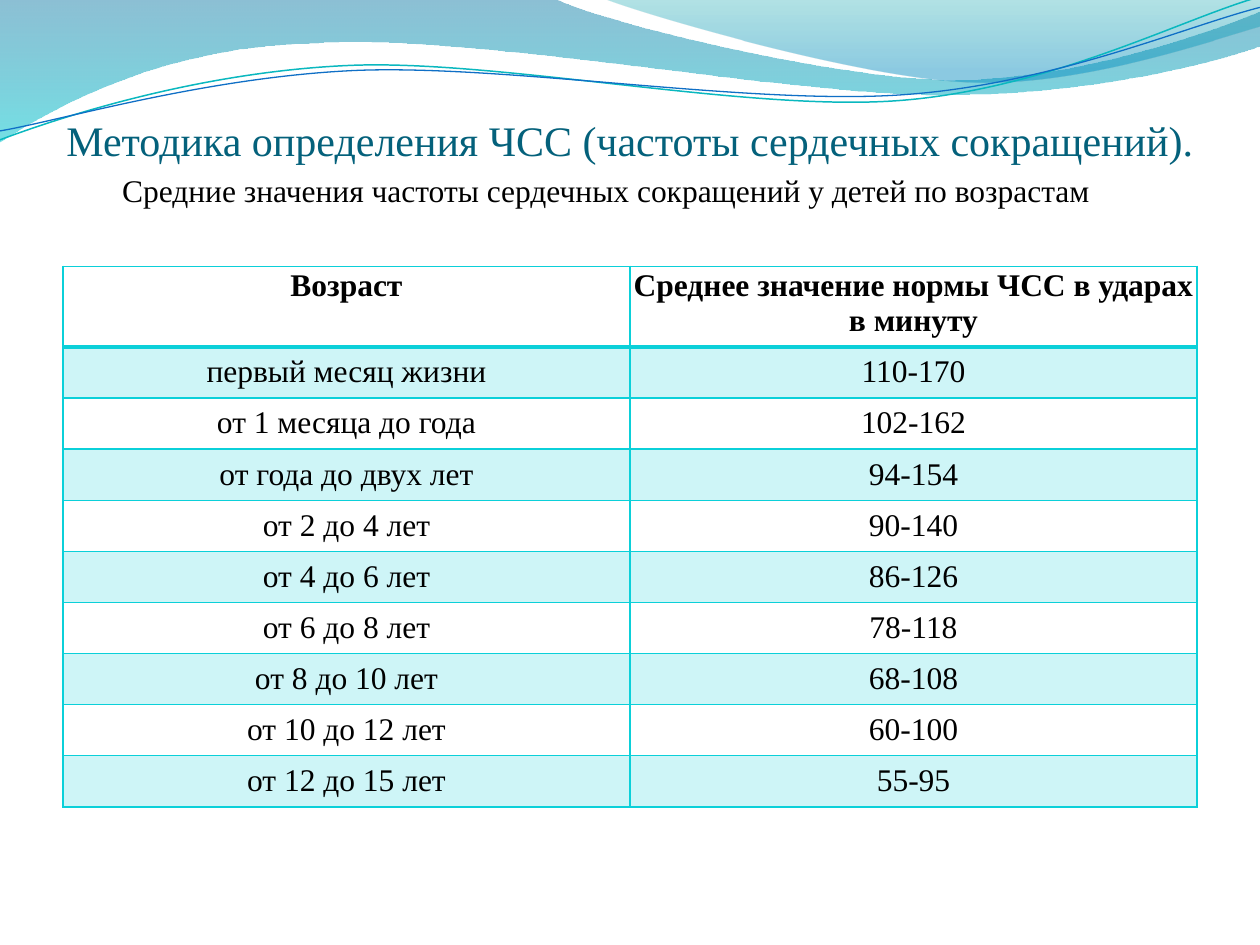
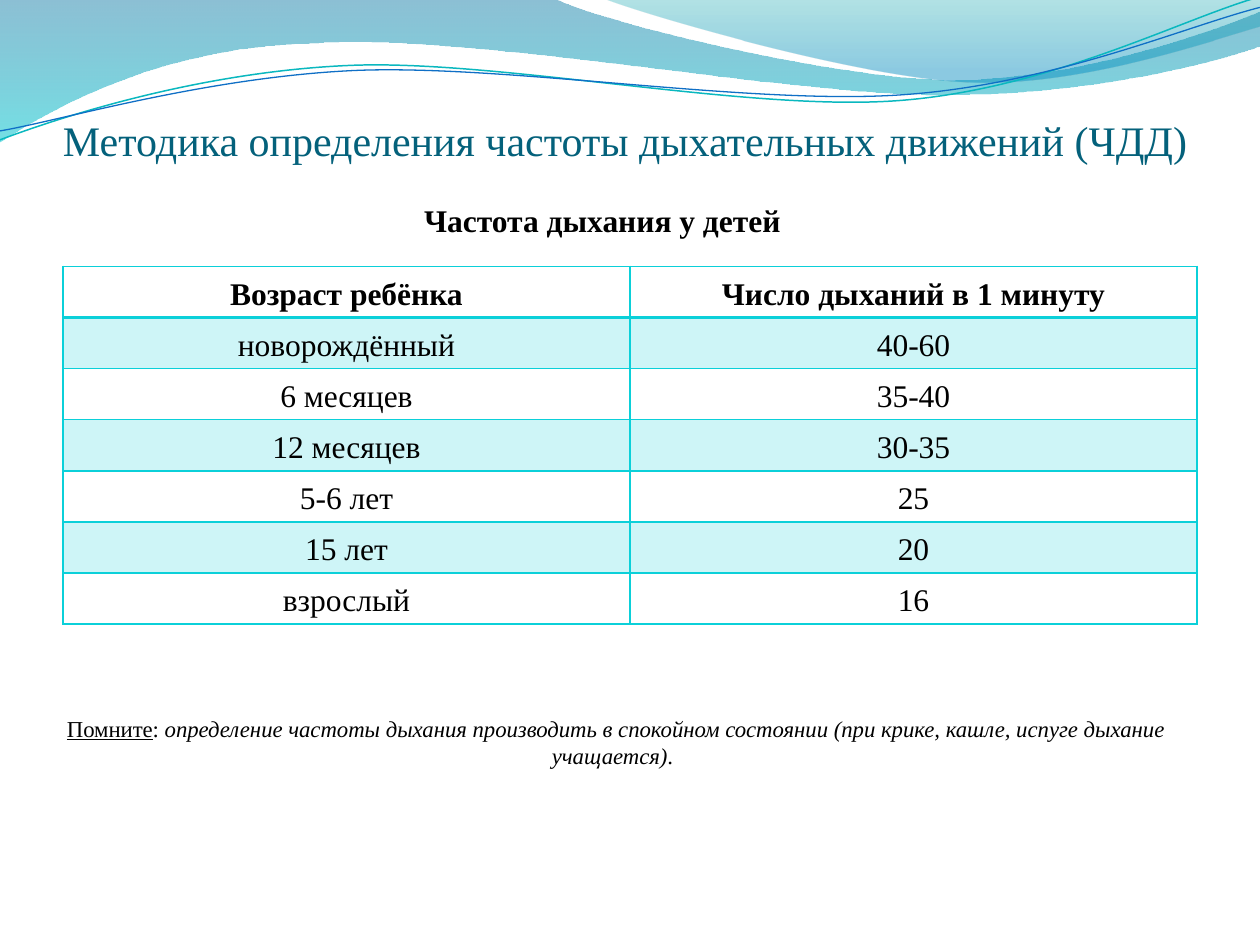
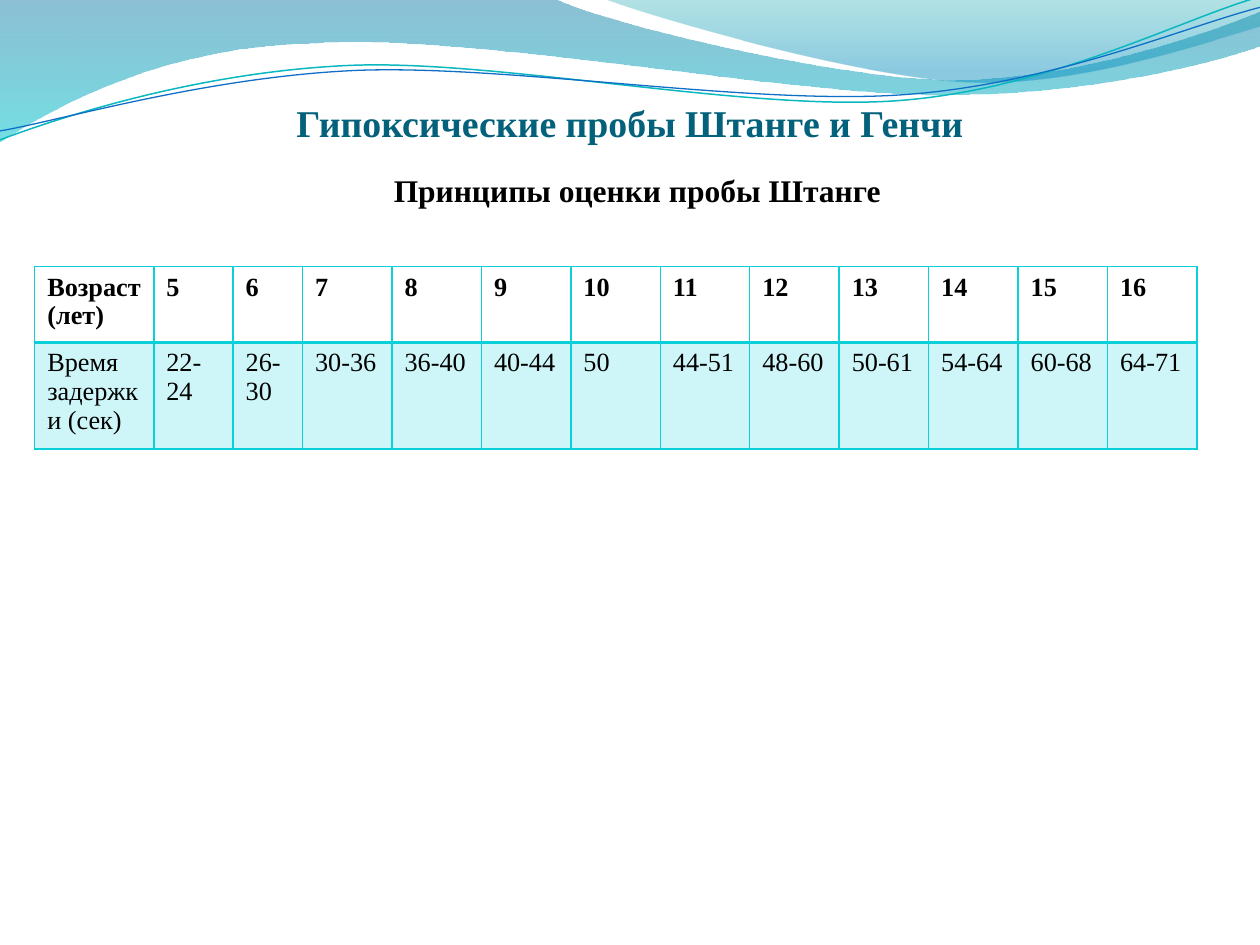
from lxml.etree import SubElement
from pptx import Presentation
from pptx.dml.color import RGBColor
from pptx.enum.text import MSO_ANCHOR as Anchor, PP_ALIGN as Align
from pptx.oxml.ns import qn
from pptx.util import Cm, Pt

FONT = "Times New Roman"
BLACK = RGBColor(0x00, 0x00, 0x00)
TITLE_COLOR = RGBColor(0x04, 0x61, 0x7B)
ACCENT = RGBColor(0x0B, 0xD0, 0xD9)
TEAL_LINE = RGBColor(0x0A, 0xB8, 0xBF)
BLUE_LINE = RGBColor(0x0F, 0x6F, 0xC6)
WAVE_TOP = RGBColor(0x00, 0x74, 0xA1)
WAVE_BOTTOM = RGBColor(0x00, 0xC6, 0xCF)
CREST_TOP = RGBColor(0x00, 0xA1, 0xA9)
CREST_BOTTOM = RGBColor(0x00, 0x8B, 0xBF)

SLIDE_WIDTH, SLIDE_HEIGHT = 25.4, 19.05
MARGIN, CONTENT_WIDTH = 1.27, 22.86
TABLE_TOP, ROW_HEIGHT = 5.37, 1.03
BAND_OPACITY = 20

# Outlines in cm: a start point, then lines (x, y) or Bezier curves (x1, y1, x2, y2, x, y)
WAVE = [(0, 0), (11.18, -0.03),
        (12.09, 0.43, 16.87, 1.6, 19.25, 1.6), (21.67, 1.6, 24.33, 0.66, 25.4, 0.23),
        (25.43, 0.91), (24.97, 1.12, 22.1, 1.93, 18.95, 1.91),
        (15.8, 1.91, 9.7, 0.71, 6.53, 0.86), (3.28, 0.91, 1.17, 2.11, -0.03, 2.87)]
CREST = [(12.17, -0.03), (12.93, 0.28, 17.32, 1.57, 19.53, 1.65),
         (21.74, 1.75, 24.41, 0.81, 25.4, 0.53), (25.4, 0)]
TEAL_CURVE = [(0, 2.82), (1.22, 2.36, 4.01, 1.45, 7.04, 1.32),
              (10.03, 1.19, 15.06, 2.26, 18.11, 2.03), (21.16, 1.8, 23.83, 0.38, 25.35, -0.05)]
BLUE_CURVE = [(0, 2.64), (1.19, 2.44, 4.17, 1.55, 7.19, 1.42),
              (10.24, 1.3, 15.16, 2.13, 18.21, 1.91), (21.23, 1.7, 23.9, 0.53, 25.4, 0.15)]


def set_alpha(element, *opacities):
    """Give each colour in the element its opacity in percent."""
    for color, opacity in zip(element.iter(qn("a:srgbClr")), opacities):
        SubElement(color, qn("a:alpha"), val=str(opacity * 1000))


class Deck:
    def __init__(self):
        self.presentation = Presentation()
        self.presentation.slide_width = Cm(SLIDE_WIDTH)
        self.presentation.slide_height = Cm(SLIDE_HEIGHT)
        self.slide = None
        # Default font of all text
        for element in (self.presentation.element, self.presentation.slide_master.element):
            for latin in element.iter(qn("a:latin")):
                latin.set("typeface", FONT)

    def new_slide(self):
        self.slide = self.presentation.slides.add_slide(self.presentation.slide_layouts[6])
        self.gradient_area(WAVE, (0, WAVE_TOP, 45), (1, WAVE_BOTTOM, 55))
        self.gradient_area(CREST, (0, CREST_TOP, 30), (0.8, CREST_BOTTOM, 45))
        self.curve(TEAL_CURVE, TEAL_LINE, 0.85)
        self.curve(BLUE_CURVE, BLUE_LINE, 0.75)

    def outline(self, outline, close):
        points = [(Cm(x), Cm(y)) for segment in outline for x, y in zip(segment[::2], segment[1::2])]
        builder = self.slide.shapes.build_freeform(*points[0])
        builder.add_line_segments(points[1:], close=close)
        shape = builder.convert_to_shape()
        shape.shadow.inherit = False
        # Join the three points of each curve into one Bezier segment
        lines = iter(list(shape.element.iter(qn("a:lnTo"))))
        for segment in outline[1:]:
            first = next(lines)
            if len(segment) == 6:
                first.tag = qn("a:cubicBezTo")
                for line in (next(lines), next(lines)):
                    first.append(line[0])
                    line.getparent().remove(line)
        return shape

    def gradient_area(self, outline, *stops):
        shape = self.outline(outline, close=True)
        shape.line.fill.background()
        shape.fill.gradient()
        shape.fill.gradient_angle = 270
        for gradient_stop, (position, color, _) in zip(shape.fill.gradient_stops, stops):
            gradient_stop.position = position
            gradient_stop.color.rgb = color
        set_alpha(shape.element, *(opacity for _, _, opacity in stops))

    def curve(self, outline, color, width):
        shape = self.outline(outline, close=False)
        shape.fill.background()
        shape.line.color.rgb = color
        shape.line.width = Pt(width)

    def style(self, paragraph, size, color=BLACK, bold=False, align=Align.CENTER):
        paragraph.alignment = align
        for run in paragraph.runs:
            font = run.font
            font.name, font.size, font.bold = FONT, Pt(size), bold
            font.color.rgb = color

    def text(self, left, top, width, height, text, size=18, anchor=Anchor.TOP, wrap=True, **style):
        box = self.slide.shapes.add_textbox(Cm(left), Cm(top), Cm(width), Cm(height))
        frame = box.text_frame
        frame.word_wrap = wrap
        frame.vertical_anchor = anchor
        frame.text = text
        self.style(frame.paragraphs[0], size, **style)
        return frame

    def title(self, text, height=1.37, size=24, **style):
        frame = self.text(MARGIN, 1.96, CONTENT_WIDTH, height, text, size, Anchor.BOTTOM,
                          color=TITLE_COLOR, **style)
        frame.margin_left = frame.margin_right = frame.margin_bottom = 0

    def note(self, left, top, width, height, parts, size):
        """Centred text whose parts are (text, underline, italic)."""
        frame = self.text(left, top, width, height, "", anchor=Anchor.MIDDLE)
        paragraph = frame.paragraphs[0]
        for text, underline, italic in parts:
            run = paragraph.add_run()
            run.text = text
            run.font.underline, run.font.italic = underline, italic
        self.style(paragraph, size)

    def cell_borders(self, cell, is_header):
        properties = cell._tc.get_or_add_tcPr()
        widths = {"lnL": 1, "lnR": 1, "lnT": 1, "lnB": 2 if is_header else 1}
        for side, width in widths.items():
            line = SubElement(properties, qn(f"a:{side}"), w=str(Pt(width)))
            fill = SubElement(line, qn("a:solidFill"))
            SubElement(fill, qn("a:srgbClr"), val=str(ACCENT))

    def table(self, left, height, columns, rows, size=18, inset=None, anchor=Anchor.TOP,
              align=Align.CENTER, header_spacing=None, body_spacing=None):
        frame = self.slide.shapes.add_table(len(rows), len(columns), Cm(left), Cm(TABLE_TOP),
                                            Cm(sum(columns)), Cm(height))
        table = frame.table
        table.first_row = table.horz_banding = False
        for column, width in zip(table.columns, columns):
            column.width = Cm(width)
        for row, values in enumerate(rows):
            table.rows[row].height = Cm(ROW_HEIGHT)
            for column, value in enumerate(values):
                cell = table.cell(row, column)
                self.cell_borders(cell, row == 0)
                if row % 2:
                    cell.fill.solid()
                    cell.fill.fore_color.rgb = ACCENT
                    set_alpha(cell._tc.tcPr.find(qn("a:solidFill")), BAND_OPACITY)
                else:
                    cell.fill.background()
                if inset is not None:
                    cell.margin_left = cell.margin_right = Cm(inset)
                    cell.margin_top = cell.margin_bottom = Cm(inset)
                cell.vertical_anchor = anchor
                cell.text_frame.text = value
                paragraph = cell.text_frame.paragraphs[0]
                paragraph.line_spacing = body_spacing if row else header_spacing
                self.style(paragraph, size, bold=row == 0, align=align)
        frame.height = Cm(height)


def heart_rate_slide(deck):
    deck.new_slide()
    deck.title("Методика определения ЧСС (частоты сердечных сокращений).")
    deck.table(MARGIN, 10.9, [CONTENT_WIDTH / 2] * 2, [
        ("Возраст", "Среднее значение нормы ЧСС в ударах в минуту"),
        ("первый месяц жизни", "110-170"),
        ("от 1 месяца до года", "102-162"),
        ("от года до двух лет", "94-154"),
        ("от 2 до 4 лет", "90-140"),
        ("от 4 до 6 лет", "86-126"),
        ("от 6 до 8 лет", "78-118"),
        ("от 8 до 10 лет", "68-108"),
        ("от 10 до 12 лет", "60-100"),
        ("от 12 до 15 лет", "55-95"),
    ], inset=0.05, body_spacing=1.15)
    deck.text(1.3, 3.33, 22, 1.02,
              "Средние значения частоты сердечных сокращений у детей по возрастам ")


def breathing_rate_slide(deck):
    deck.new_slide()
    deck.title("Методика определения частоты дыхательных движений (ЧДД)", align=Align.LEFT)
    deck.table(MARGIN, 7.21, [CONTENT_WIDTH / 2] * 2, [
        ("Возраст ребёнка", "Число дыханий в 1 минуту"),
        ("новорождённый", "40-60"),
        ("6 месяцев", "35-40"),
        ("12 месяцев", "30-35"),
        ("5-6 лет", "25"),
        ("15 лет", "20"),
        ("взрослый", "16"),
    ], inset=0.03, anchor=Anchor.MIDDLE, header_spacing=1.15, body_spacing=1.15)
    deck.text(8.3, 3.93, 7.77, 1.02, "Частота дыхания у детей", wrap=False, bold=True, align=Align.LEFT)
    deck.note(0.71, 14.27, 23.39, 1.37, [
        ("Помните", True, False),
        (": ", False, False),
        ("определение частоты дыхания производить в спокойном состоянии "
         "(при крике, кашле, испуге дыхание учащается)", False, True),
        (". ", False, False),
    ], size=13)


def breath_holding_slide(deck):
    deck.new_slide()
    deck.title("Гипоксические пробы Штанге и Генчи", height=0.97, size=21.6, bold=True)
    ages = [str(age) for age in range(5, 17)]
    seconds = ["22-24", "26-30", "30-36", "36-40", "40-44", "50",
               "44-51", "48-60", "50-61", "54-64", "60-68", "64-71"]
    first_columns = [2.4, 1.6, 1.4]
    other_width = (23.43 - sum(first_columns)) / 10
    deck.table(0.7, 3.68, first_columns + [other_width] * 10,
               [["Возраст (лет)"] + ages, ["Время задержки (сек)"] + seconds],
               size=15, align=Align.LEFT)
    deck.text(6.5, 3.33, 12.7, 1.02, "Принципы оценки пробы Штанге", bold=True)


def main():
    deck = Deck()
    heart_rate_slide(deck)
    breathing_rate_slide(deck)
    breath_holding_slide(deck)
    deck.presentation.save("out.pptx")


if __name__ == "__main__":
    main()
